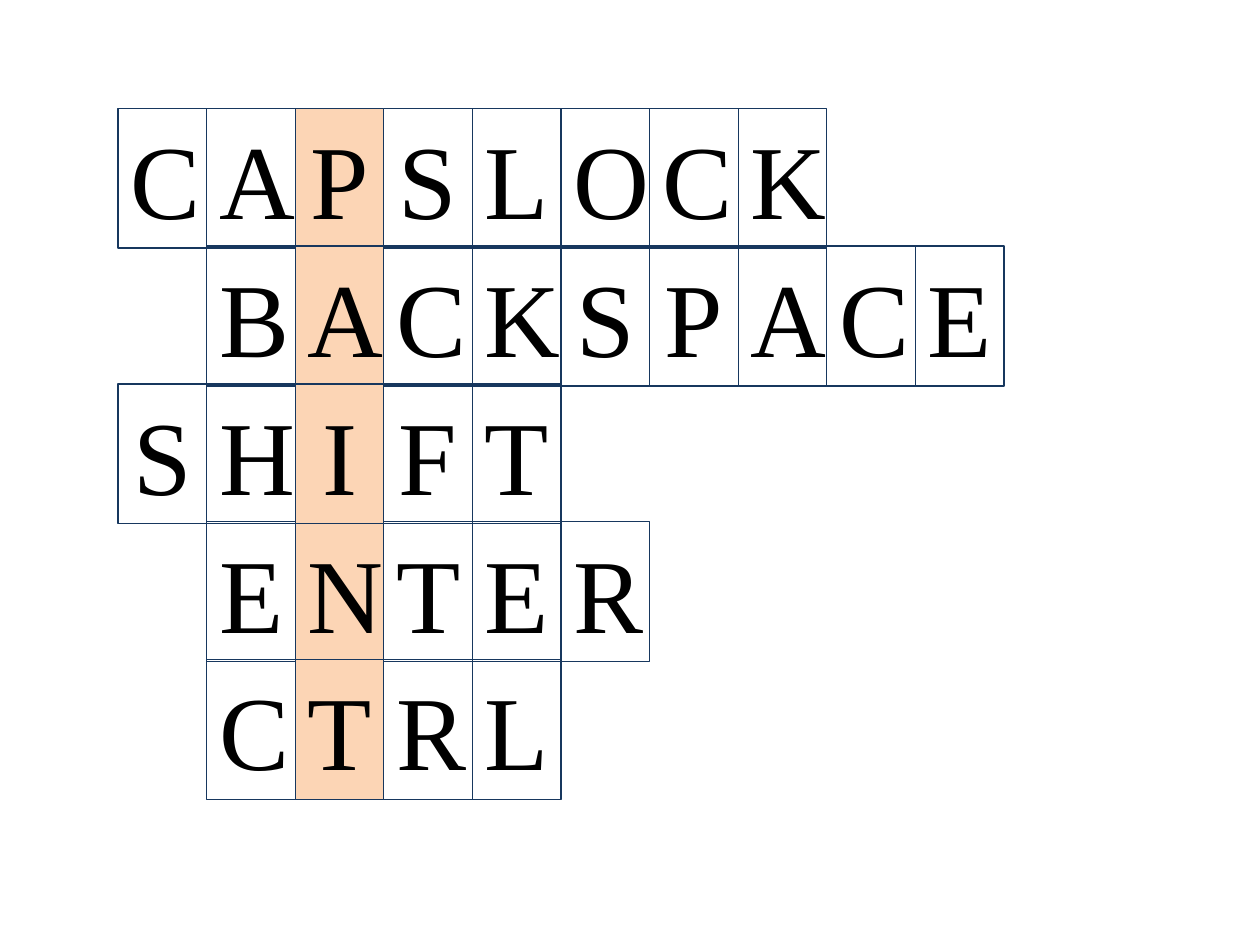
from dataclasses import dataclass

from pptx import Presentation
from pptx.dml.color import RGBColor
from pptx.enum.shapes import MSO_SHAPE
from pptx.enum.text import MSO_ANCHOR, MSO_AUTO_SIZE, PP_ALIGN
from pptx.util import Inches, Pt

RECTANGLE = MSO_SHAPE.RECTANGLE
BOTTOM = MSO_ANCHOR.BOTTOM
GROW = MSO_AUTO_SIZE.SHAPE_TO_FIT_TEXT
CENTER, LEFT = PP_ALIGN.CENTER, PP_ALIGN.LEFT

# The grid lies on sixty-fourths of an inch.
GRID_UNIT = Inches(1) / 64
GRID_LEFT, GRID_TOP = 60 * GRID_UNIT, 55 * GRID_UNIT
COLUMN_PITCH, ROW_PITCH = 45 * GRID_UNIT, 70 * GRID_UNIT
CELL_WIDTH, CELL_HEIGHT = round(COLUMN_PITCH), Inches(1.11)
BOTTOM_INSET = Inches(0.06)
KEY_COLUMN = 2
LEFT_ALIGNED_FROM = 8

# Starting column and word; the first word mixes Cyrillic and Latin letters.
WORDS = [
    (0, "САРSLOСK"),
    (1, "BACKSPACE"),
    (0, "SHIFT"),
    (1, "ENTER"),
    (1, "CTRL"),
]

# Row and its columns, from back to front.
STACKING = [
    (0, (0, 1, 3, 6, 4, 5, 2, 7)),
    (1, (1, 8, 7, 6, 5, 4, 3)),
    (2, (4,)),
    (4, (1,)),
    (3, (1,)),
    (2, (1,)),
    (1, (9,)),
    (3, (2,)),
    (4, (4, 3, 2)),
    (3, (5, 4, 3)),
    (2, (0,)),
    (1, (2,)),
    (2, (3, 2)),
]


@dataclass(frozen=True)
class Theme:
    font: str = "Times New Roman"
    letter_size: Pt = Pt(60)
    line_width: Pt = Pt(0.75)
    letter: RGBColor = RGBColor(0x00, 0x00, 0x00)
    line: RGBColor = RGBColor(0x17, 0x37, 0x5E)
    highlight: RGBColor = RGBColor(0xFC, 0xD5, 0xB5)


class Crossword:
    def __init__(self, slide, theme):
        self.slide = slide
        self.theme = theme

    def add_cell(self, row, column):
        shape = self.slide.shapes.add_shape(
            RECTANGLE,
            round(GRID_LEFT + column * COLUMN_PITCH),
            round(GRID_TOP + row * ROW_PITCH),
            CELL_WIDTH,
            CELL_HEIGHT,
        )
        shape.shadow.inherit = False
        shape.line.color.rgb = self.theme.line
        shape.line.width = self.theme.line_width
        if column == KEY_COLUMN:
            shape.fill.solid()
            shape.fill.fore_color.rgb = self.theme.highlight
        else:
            shape.fill.background()

        frame = shape.text_frame
        frame.word_wrap = True
        frame.auto_size = GROW
        frame.vertical_anchor = BOTTOM
        frame.margin_bottom = BOTTOM_INSET
        first_column, word = WORDS[row]
        paragraph = frame.paragraphs[0]
        paragraph.text = word[column - first_column]
        paragraph.alignment = LEFT if column >= LEFT_ALIGNED_FROM else CENTER
        paragraph.font.name = self.theme.font
        paragraph.font.size = self.theme.letter_size
        paragraph.font.color.rgb = self.theme.letter


def main():
    presentation = Presentation()
    presentation.slide_width = Inches(10)
    presentation.slide_height = Inches(7.5)
    slide = presentation.slides.add_slide(presentation.slide_layouts[6])
    crossword = Crossword(slide, Theme())
    for row, columns in STACKING:
        for column in columns:
            crossword.add_cell(row, column)
    presentation.save("out.pptx")


if __name__ == "__main__":
    main()
